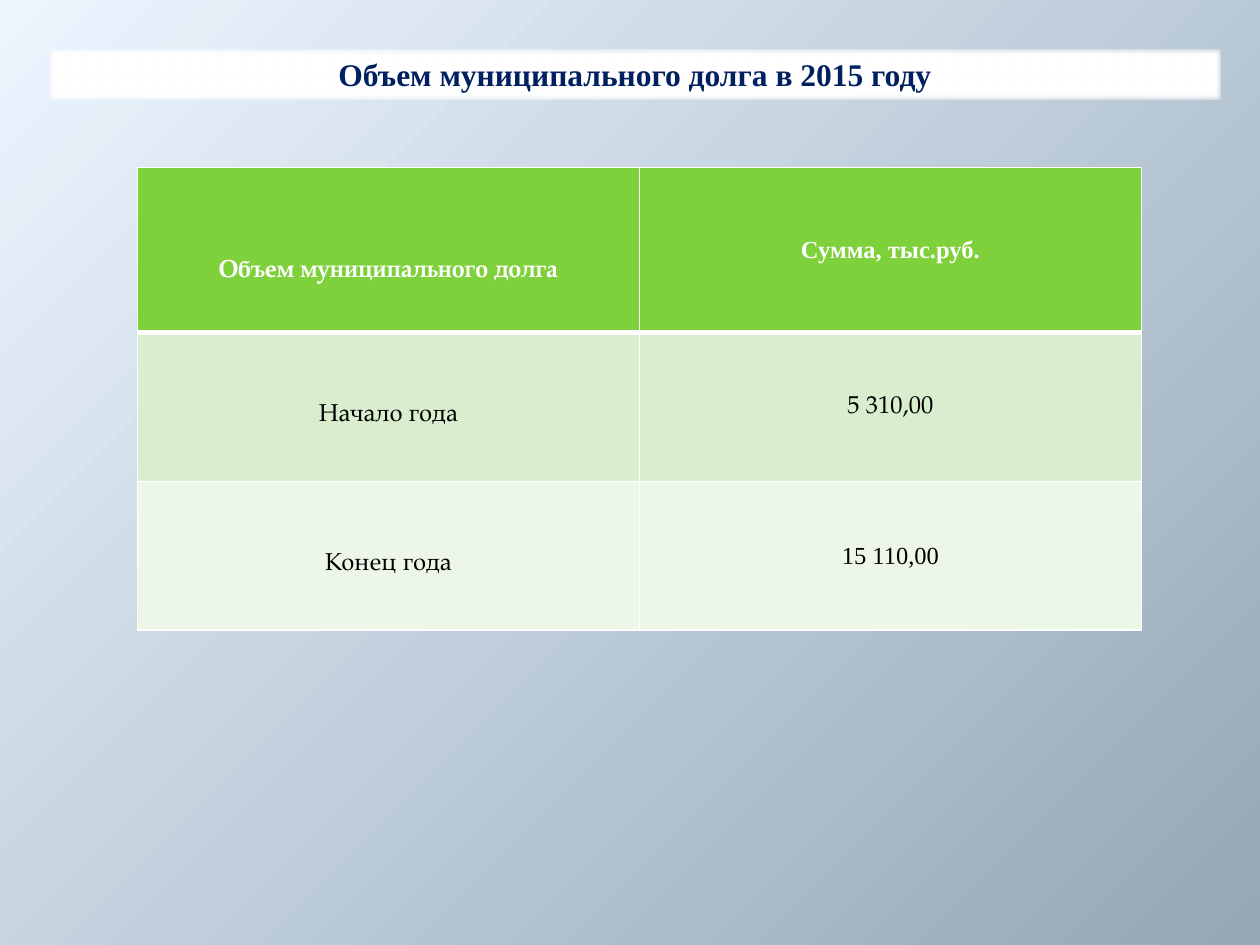
from lxml.etree import SubElement
from pptx import Presentation
from pptx.dml.color import RGBColor
from pptx.enum.text import MSO_ANCHOR as Anchor, MSO_AUTO_SIZE as AutoSize, PP_ALIGN as Align
from pptx.oxml import parse_xml
from pptx.oxml.ns import nsdecls, qn
from pptx.util import Inches, Pt

WHITE = RGBColor(0xFF, 0xFF, 0xFF)
BLACK = RGBColor(0, 0, 0)
NAVY = RGBColor(0x00, 0x20, 0x60)
GREEN = RGBColor(0x7F, 0xD1, 0x3B)
LIGHT_GREEN = RGBColor(0xD8, 0xEE, 0xCE)
PALE_GREEN = RGBColor(0xEC, 0xF7, 0xE8)
SKY = RGBColor(0xEC, 0xF6, 0xFF)
STEEL = RGBColor(0x94, 0xA7, 0xB7)
SERIF = "Times New Roman"
PAGELLA = "TeX Gyre Pagella"

TITLE = "Объем муниципального долга в 2015 году"
DEBT_ROWS = [
    [("Объем муниципального долга", PAGELLA), ("Сумма, тыс.руб.", SERIF)],
    [("Начало года", PAGELLA), ("5 310,00", PAGELLA)],
    [("Конец года", PAGELLA), ("15 110,00", SERIF)],
]
ROW_HEIGHTS = [1.31, 1.18, 1.18]
ROW_FILLS = [GREEN, LIGHT_GREEN, PALE_GREEN]
LABEL_TOPS = [0.4, 0.2, 0.2]


def write_text(frame, text, font=SERIF, size=14, color=BLACK, bold=False):
    """Write one centred paragraph into a text frame."""
    para = frame.paragraphs[0]
    para.alignment = Align.CENTER
    span = para.add_run()
    span.text = text
    span.font.name = font
    span.font.size = Pt(size)
    span.font.bold = bold
    span.font.color.rgb = color


def paint_background(page):
    """Fill the page with a diagonal gradient."""
    fill = page.background.fill
    fill.gradient()
    fill.gradient_angle = 315
    for stop, color, position in zip(fill.gradient_stops, (SKY, STEEL), (0, 1)):
        stop.color.rgb = color
        stop.position = position


def place_title(page, left, top, width, height):
    """Place the title on a white band with soft edges."""
    box = page.shapes.title
    box.left, box.top, box.width, box.height = map(Inches, (left, top, width, height))
    box.fill.solid()
    box.fill.fore_color.rgb = WHITE
    effects = SubElement(box._element.spPr, qn("a:effectLst"))
    SubElement(effects, qn("a:softEdge"), rad=str(Inches(0.03)))
    frame = box.text_frame
    frame.word_wrap = True
    frame.auto_size = AutoSize.NONE
    frame.vertical_anchor = Anchor.MIDDLE
    write_text(frame, TITLE, size=18, color=NAVY, bold=True)


def draw_borders(cell, bottom=1, top=1):
    """Give a cell white borders, with widths in points."""
    properties = cell._tc.get_or_add_tcPr()
    widths = {"lnL": 1, "lnR": 1, "lnT": top, "lnB": bottom}
    for index, (side, width) in enumerate(widths.items()):
        properties.insert(index, parse_xml(
            f'<a:{side} {nsdecls("a")} w="{Pt(width)}"><a:solidFill>'
            f'<a:srgbClr val="{WHITE}"/></a:solidFill></a:{side}>'))


def place_debt_table(page, left, top, width, height):
    """Place the debt table with equal columns."""
    box = page.shapes.add_table(3, 2, *map(Inches, (left, top, width, height)))
    table = box.table
    for row, row_height in zip(table.rows, ROW_HEIGHTS):
        row.height = Inches(row_height)
    for row_index, entries in enumerate(DEBT_ROWS):
        header = row_index == 0
        for column, (text, font) in enumerate(entries):
            cell = table.cell(row_index, column)
            cell.fill.solid()
            cell.fill.fore_color.rgb = ROW_FILLS[row_index]
            cell.vertical_anchor = Anchor.MIDDLE
            if column == 0:
                cell.margin_top = Inches(LABEL_TOPS[row_index])
            else:
                cell.margin_left = cell.margin_right = cell.margin_top = Inches(0.01)
                cell.margin_bottom = 0
            draw_borders(cell, bottom=3 if header else 1, top=3 if row_index == 1 else 1)
            write_text(cell.text_frame, text, font=font,
                       color=WHITE if header else BLACK, bold=header)


def main():
    """Build and save the deck."""
    deck = Presentation()
    deck.slide_width, deck.slide_height = Inches(10), Inches(7.5)
    page = deck.slides.add_slide(deck.slide_layouts[5])
    paint_background(page)
    place_title(page, 0.39, 0.39, 9.3, 0.4)
    place_debt_table(page, 1.09, 1.33, 7.97, sum(ROW_HEIGHTS))
    deck.save("out.pptx")


if __name__ == "__main__":
    main()
